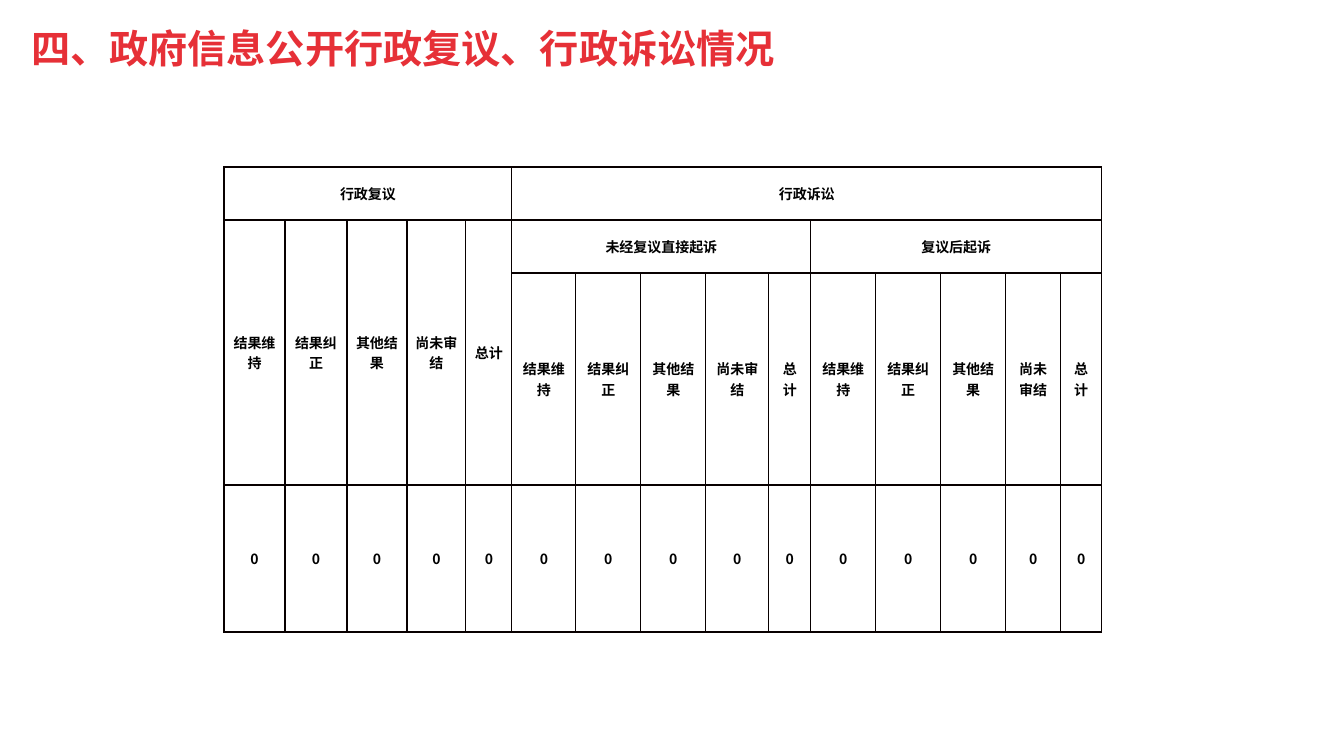
from lxml import etree
from pptx import Presentation
from pptx.dml.color import RGBColor
from pptx.enum.text import MSO_ANCHOR as Anchor, MSO_AUTO_SIZE as AutoSize, PP_ALIGN as Align
from pptx.oxml.ns import qn
from pptx.util import Pt

EMU_PER_PX = 914400 / 100.8
COLORS = {"title": "E63037", "text": "000000", "border": "080000"}
CJK_FONT = "Noto Sans CJK SC"

COL_WIDTHS = [61, 62, 60, 59, 46, 64, 65, 65, 63, 42, 65, 65, 65, 55, 41]
ROW_HEIGHTS = [53, 53, 212, 147]
RESULTS = ["结果维持", "结果纠正", "其他结果", "尚未审结", "总计"]
GROUP = len(RESULTS)


def px(n):
    return round(n * EMU_PER_PX)


def style_paragraph(p, size, font, color, align):
    p.alignment = align
    f = p.font
    f.size, f.bold, f.name = Pt(size), True, font
    f.color.rgb = RGBColor.from_string(COLORS[color])
    # East Asian typeface follows the Latin one
    latin = p._p.pPr.find(qn("a:defRPr")).find(qn("a:latin"))
    ea = etree.Element(qn("a:ea"), typeface=CJK_FONT)
    latin.addnext(ea)


def add_title(s, text):
    title = s.shapes.title
    title.left, title.top, title.width, title.height = px(21), px(20), px(1159), px(62)
    tf = title.text_frame
    tf.text = text
    tf.word_wrap = True
    tf.auto_size = AutoSize.NONE
    tf.vertical_anchor = Anchor.MIDDLE
    p = tf.paragraphs[0]
    p.line_spacing = 0.9
    style_paragraph(p, 28, "Montserrat", "title", Align.LEFT)


def format_cell(cell):
    cell.margin_left = cell.margin_right = px(8)
    cell.margin_top = cell.margin_bottom = 0
    cell.vertical_anchor = Anchor.MIDDLE
    tcPr = cell._tc.get_or_add_tcPr()
    for side in ("lnL", "lnR", "lnT", "lnB"):
        ln = etree.SubElement(tcPr, qn(f"a:{side}"), w=str(Pt(1)))
        fill = etree.SubElement(ln, qn("a:solidFill"))
        etree.SubElement(fill, qn("a:srgbClr"), val=COLORS["border"])
    cell.fill.background()
    style_paragraph(cell.text_frame.paragraphs[0], 10, CJK_FONT, "text", Align.CENTER)


def add_case_table(s, left, top):
    rows, cols = len(ROW_HEIGHTS), len(COL_WIDTHS)
    table = s.shapes.add_table(rows, cols, px(left), px(top),
                               px(sum(COL_WIDTHS)), px(sum(ROW_HEIGHTS))).table
    table.first_row = table.horz_banding = False
    for col, width in zip(table.columns, COL_WIDTHS):
        col.width = px(width)
    for row, height in zip(table.rows, ROW_HEIGHTS):
        row.height = px(height)

    # Group headings: row, first column, last column, text
    for r, first, last, text in [
        (0, 0, GROUP - 1, "行政复议"),
        (0, GROUP, cols - 1, "行政诉讼"),
        (1, GROUP, 2 * GROUP - 1, "未经复议直接起诉"),
        (1, 2 * GROUP, cols - 1, "复议后起诉"),
    ]:
        table.cell(r, first).merge(table.cell(r, last))
        table.cell(r, first).text = text

    # Result headings and counts; the review headings span two rows
    for c in range(cols):
        is_review = c < GROUP
        if is_review:
            table.cell(1, c).merge(table.cell(2, c))
        table.cell(1 if is_review else 2, c).text = RESULTS[c % GROUP]
        table.cell(3, c).text = "0"

    for cell in table.iter_cells():
        format_cell(cell)


def main():
    prs = Presentation()
    prs.slide_width, prs.slide_height = px(1344), px(756)
    s = prs.slides.add_slide(prs.slide_layouts[5])
    add_title(s, "四、政府信息公开行政复议、行政诉讼情况")
    add_case_table(s, 224, 167)
    prs.save("out.pptx")


if __name__ == "__main__":
    main()
